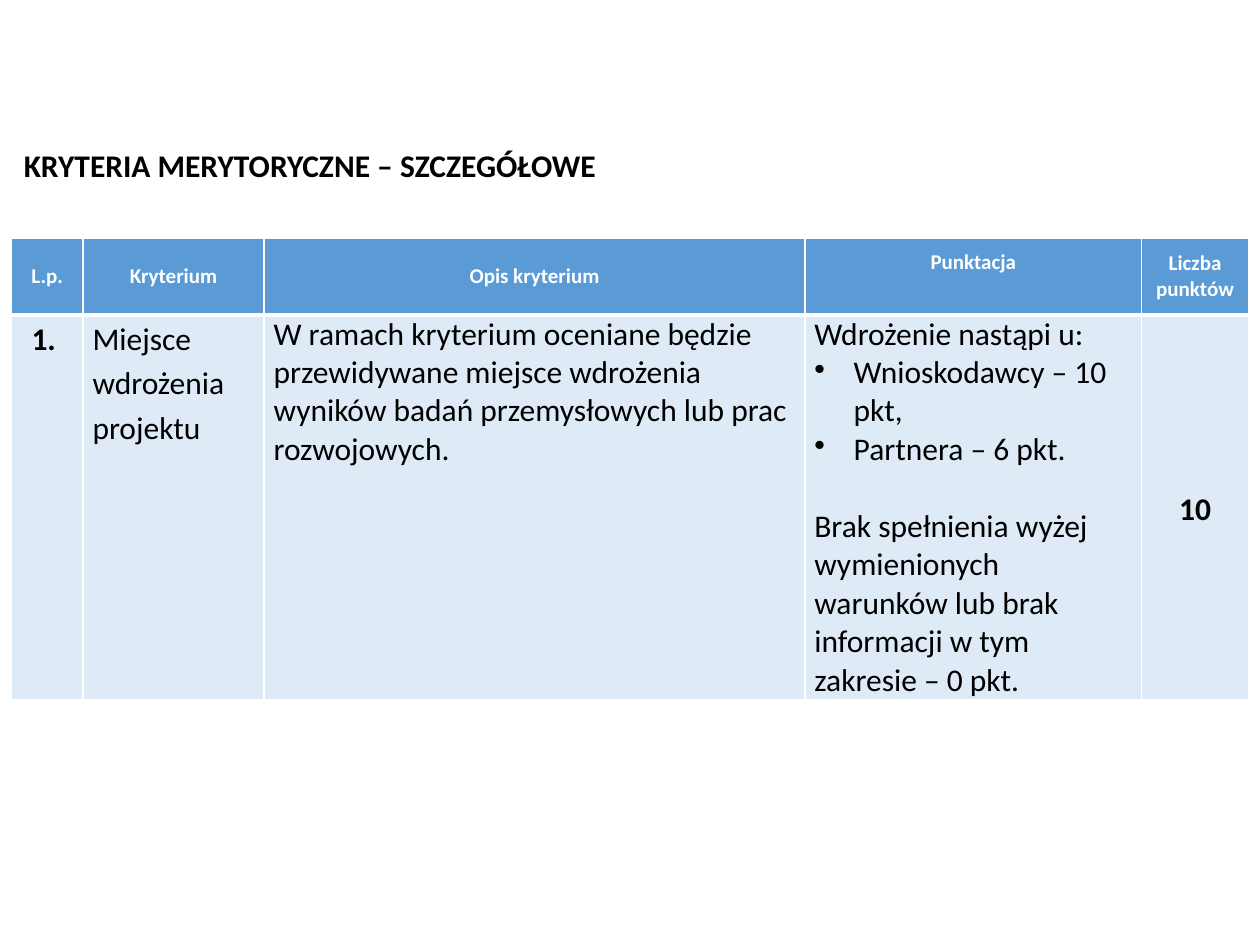
from lxml import etree
from pptx import Presentation
from pptx.dml.color import RGBColor
from pptx.enum.text import MSO_ANCHOR, MSO_AUTO_SIZE, PP_ALIGN
from pptx.oxml.ns import qn
from pptx.util import Pt

CENTER, LEFT = PP_ALIGN.CENTER, PP_ALIGN.LEFT
TOP, MIDDLE = MSO_ANCHOR.TOP, MSO_ANCHOR.MIDDLE
FIT_SHAPE = MSO_AUTO_SIZE.SHAPE_TO_FIT_TEXT

COLORS = {"header": "5B9BD5", "body": "DEEBF7", "white": "FFFFFF", "black": "000000"}
FONT = "Calibri"
COLUMN_WIDTHS = [41, 103.5, 309, 192.5, 61]
ROW_HEIGHTS = [44, 216]
BULLET_INDENT = Pt(22.5)
HEADER_BORDERS = {"lnL": 1, "lnR": 1, "lnT": 1, "lnB": 3}
BODY_BORDERS = {"lnL": 1, "lnR": 1, "lnT": 3, "lnB": 1}
BODY_MARGINS = {"margin_left": Pt(5.4), "margin_right": Pt(5.4),
                "margin_top": 0, "margin_bottom": 0}

HEADERS = ["L.p.", "Kryterium", "Opis kryterium", "Punktacja", "Liczba punktów"]
HEADER_FORMATS = {"Punktacja": {"vertical_anchor": TOP, "margin_top": Pt(6.5)}}
WIDE = {"line_spacing": 1.15}
WIDE_CENTERED = {"line_spacing": 1.15, "alignment": CENTER}
BODY_CELLS = [
    {"paras": [("1. ", WIDE_CENTERED)], "bold": True},
    {"paras": [("Miejsce wdrożenia projektu", WIDE)]},
    {"paras": [("W ramach kryterium oceniane będzie przewidywane miejsce wdrożenia "
                "wyników badań przemysłowych lub prac rozwojowych.", {})]},
    {"paras": [
        ("Wdrożenie nastąpi u:", {}),
        ("Wnioskodawcy – 10 pkt,", {"bullet": "•"}),
        ("Partnera – 6 pkt.", {"bullet": "•"}),
        ("Brak spełnienia wyżej wymienionych warunków lub brak informacji "
         "w tym zakresie – 0 pkt.", {"space_before": Pt(22)}),
    ]},
    {"paras": [("10", WIDE_CENTERED)], "bold": True, "anchor": MIDDLE},
]


def apply_format(target, values):
    for name, value in values.items():
        setattr(target, name, value)


def add_bullet(para, character):
    properties = para._p.get_or_add_pPr()
    properties.set("marL", str(BULLET_INDENT))
    properties.set("indent", str(-BULLET_INDENT))
    etree.SubElement(properties, qn("a:buChar"), char=character)


def write_paragraphs(frame, paras, size, color, bold):
    for index, (text, values) in enumerate(paras):
        para = frame.add_paragraph() if index else frame.paragraphs[0]
        values = {"alignment": LEFT, **values}
        bullet = values.pop("bullet", None)
        apply_format(para, values)
        if bullet:
            add_bullet(para, bullet)
        span = para.add_run()
        span.text = text
        apply_format(span.font, {"name": FONT, "size": Pt(size), "bold": bold})
        span.font.color.rgb = RGBColor.from_string(COLORS[color])


def style_cell(cell, fill, borders, values):
    properties = cell._tc.get_or_add_tcPr()
    for side, width in borders.items():
        line = etree.SubElement(properties, qn(f"a:{side}"), w=str(Pt(width)))
        solid = etree.SubElement(line, qn("a:solidFill"))
        etree.SubElement(solid, qn("a:srgbClr"), val=COLORS["white"])
    cell.fill.solid()
    cell.fill.fore_color.rgb = RGBColor.from_string(COLORS[fill])
    apply_format(cell, values)


def add_title(slide, text):
    box = slide.shapes.add_textbox(Pt(6.5), Pt(79.5), Pt(353), Pt(29))
    apply_format(box.text_frame, {"word_wrap": False, "auto_size": FIT_SHAPE,
                                  "vertical_anchor": MIDDLE})
    write_paragraphs(box.text_frame, [(text, {})], 18, "black", True)


def add_criteria_table(slide):
    table = slide.shapes.add_table(
        len(ROW_HEIGHTS), len(COLUMN_WIDTHS), Pt(6.5), Pt(136),
        Pt(sum(COLUMN_WIDTHS)), Pt(sum(ROW_HEIGHTS))).table
    table.horz_banding = False
    for column, width in zip(table.columns, COLUMN_WIDTHS):
        column.width = Pt(width)
    for row, height in zip(table.rows, ROW_HEIGHTS):
        row.height = Pt(height)

    for index, header in enumerate(HEADERS):
        cell = table.cell(0, index)
        style_cell(cell, "header", HEADER_BORDERS,
                   {"vertical_anchor": MIDDLE, **HEADER_FORMATS.get(header, {})})
        write_paragraphs(cell.text_frame, [(header, {"alignment": CENTER})],
                         12, "white", True)

    for index, content in enumerate(BODY_CELLS):
        cell = table.cell(1, index)
        style_cell(cell, "body", BODY_BORDERS,
                   {"vertical_anchor": content.get("anchor", TOP), **BODY_MARGINS})
        write_paragraphs(cell.text_frame, content["paras"], 18, "black",
                         content.get("bold", False))


def main():
    deck = Presentation()
    apply_format(deck, {"slide_width": Pt(720), "slide_height": Pt(540)})
    slide = deck.slides.add_slide(deck.slide_layouts[6])
    add_criteria_table(slide)
    add_title(slide, "KRYTERIA MERYTORYCZNE – SZCZEGÓŁOWE")
    deck.save("out.pptx")


if __name__ == "__main__":
    main()
